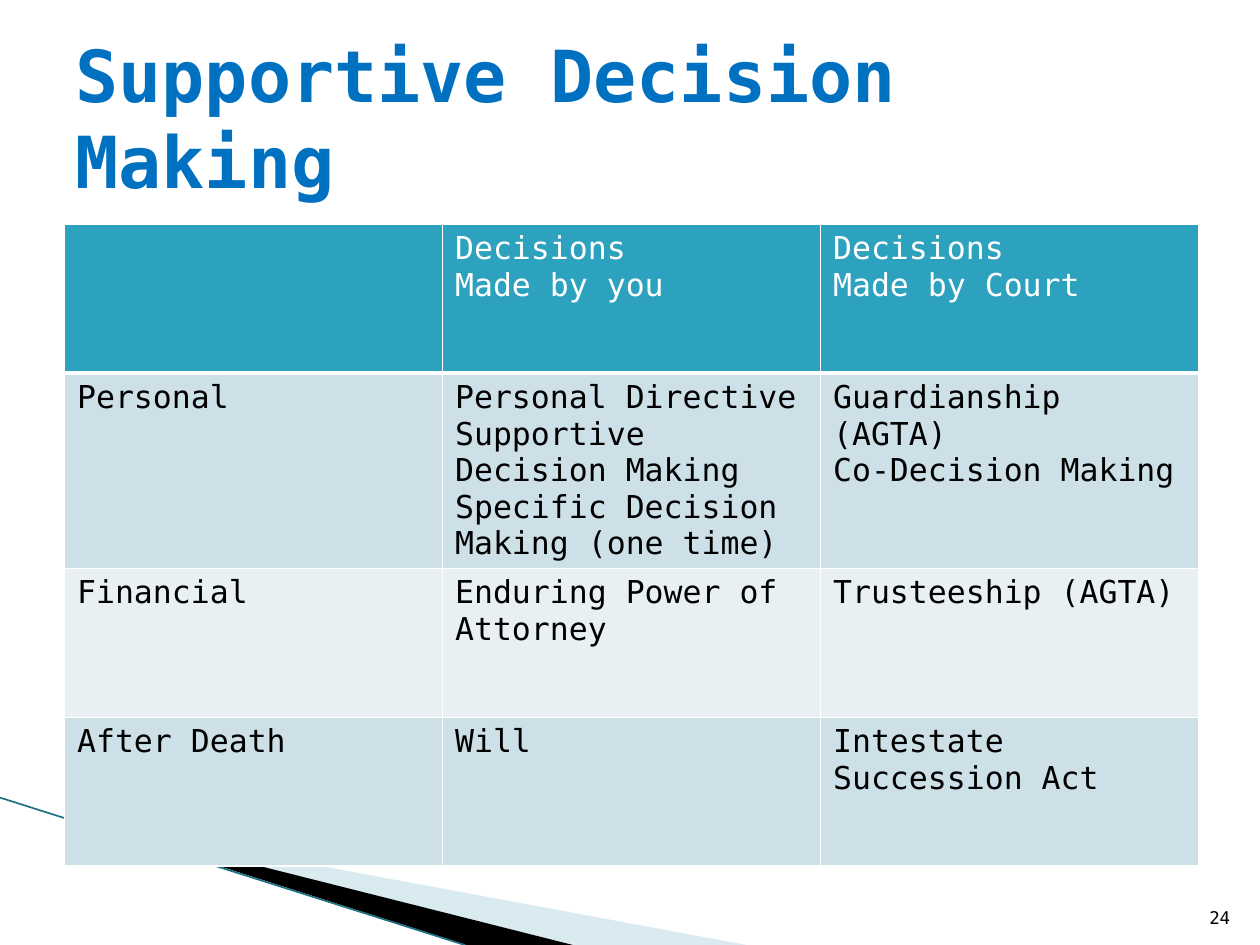
import pptx
import pptx.util
import pptx.dml.color
import pptx.enum.shapes
import pptx.enum.text
import pptx.oxml
import pptx.oxml.ns
import lxml.etree

Cm = pptx.util.Cm
Pt = pptx.util.Pt
Anchor = pptx.enum.text.MSO_ANCHOR
Align = pptx.enum.text.PP_ALIGN
qn = pptx.oxml.ns.qn

FONT = "DejaVu Sans Mono"
COLORS = {
    "title": "0070C0",
    "head": "2DA2BF",
    "odd": "CDE0E8",
    "even": "E8F0F4",
    "pale": "A0CBDC",
    "line": "1F7083",
    "white": "FFFFFF",
    "black": "000000",
}
ROWS = [
    [[], ["Decisions", "Made by you"], ["Decisions", "Made by Court"]],
    [["Personal"],
     ["Personal Directive", "Supportive Decision Making",
      "Specific Decision Making (one time)"],
     ["Guardianship (AGTA)", "Co-Decision Making"]],
    [["Financial"], ["Enduring Power of Attorney"], ["Trusteeship (AGTA)"]],
    [["After Death"], ["Will"], ["Intestate", "Succession Act"]],
]
HEIGHTS = [3, 3.93, 3, 3]


def color(name):
    return pptx.dml.color.RGBColor.from_string(COLORS[name])


def write(frame, lines, size, tint, bold=False, align=Align.LEFT):
    for i, line in enumerate(lines):
        para = frame.add_paragraph() if i else frame.paragraphs[0]
        para.alignment = align
        run = para.add_run()
        run.text = line
        run.font.name = FONT
        run.font.size = Pt(size)
        run.font.bold = bold
        run.font.color.rgb = color(tint)


def add_text(slide, box, line, size, tint, anchor, **style):
    frame = slide.shapes.add_textbox(*map(Cm, box)).text_frame
    frame.word_wrap = True
    frame.vertical_anchor = anchor
    write(frame, [line], size, tint, **style)


def add_wedge(slide, points, tint, alpha=100):
    start, *rest = [(Cm(x), Cm(y)) for x, y in points]
    pen = slide.shapes.build_freeform(*start)
    pen.add_line_segments(rest)
    shape = pen.convert_to_shape()
    shape.shadow.inherit = False
    shape.fill.solid()
    shape.fill.fore_color.rgb = color(tint)
    shape.line.fill.background()
    if alpha < 100:
        node = shape.fill._xPr.find(".//" + qn("a:srgbClr"))
        lxml.etree.SubElement(node, qn("a:alpha"), val=str(alpha * 1000))


def add_line(slide, start, end):
    kind = pptx.enum.shapes.MSO_CONNECTOR.STRAIGHT
    line = slide.shapes.add_connector(kind, *map(Cm, start + end))
    line.line.color.rgb = color("line")
    line.line.width = Pt(0.95)
    lxml.etree.SubElement(line._element.spPr, qn("a:effectLst"))


def add_edges(cell, base):
    props = cell._tc.get_or_add_tcPr()
    widths = {"L": 1, "R": 1, "T": 1, "B": base}
    for i, (side, width) in enumerate(widths.items()):
        edge = lxml.etree.Element(qn("a:ln" + side), w=str(Pt(width)))
        fill = lxml.etree.SubElement(edge, qn("a:solidFill"))
        lxml.etree.SubElement(fill, qn("a:srgbClr"), val=COLORS["white"])
        props.insert(i, edge)


def add_grid(slide):
    box = map(Cm, (1.3, 4.52, 22.86, sum(HEIGHTS)))
    table = slide.shapes.add_table(len(ROWS), len(ROWS[0]), *box).table
    for r, row in enumerate(ROWS):
        table.rows[r].height = Cm(HEIGHTS[r])
        fill = "head" if r == 0 else "odd" if r % 2 else "even"
        for c, lines in enumerate(row):
            cell = table.cell(r, c)
            cell.fill.solid()
            cell.fill.fore_color.rgb = color(fill)
            add_edges(cell, 1 if r else 3)
            write(cell.text_frame, lines, 18, "black" if r else "white")


def main():
    deck = pptx.Presentation()
    deck.slide_width, deck.slide_height = Cm(25.4), Cm(19.05)
    slide = deck.slides.add_slide(deck.slide_layouts[6])
    add_wedge(slide, [(1.4, 16.52), (15.05, 19.05), (11.58, 19.05)], "pale", 40)
    add_wedge(slide, [(1.35, 16.48), (11.55, 19.05), (9.4, 19.05)], "black")
    add_line(slide, (0, 16.08), (9.37, 19.05))
    add_grid(slide)
    add_text(slide, (1.27, 0.76, 22.86, 3.18), "Supportive Decision Making",
             41, "title", Anchor.MIDDLE, bold=True)
    add_text(slide, (24.03, 17.81, 1.02, 1.02), "24",
             10, "black", Anchor.BOTTOM, align=Align.RIGHT)
    deck.save("out.pptx")


if __name__ == "__main__":
    main()
